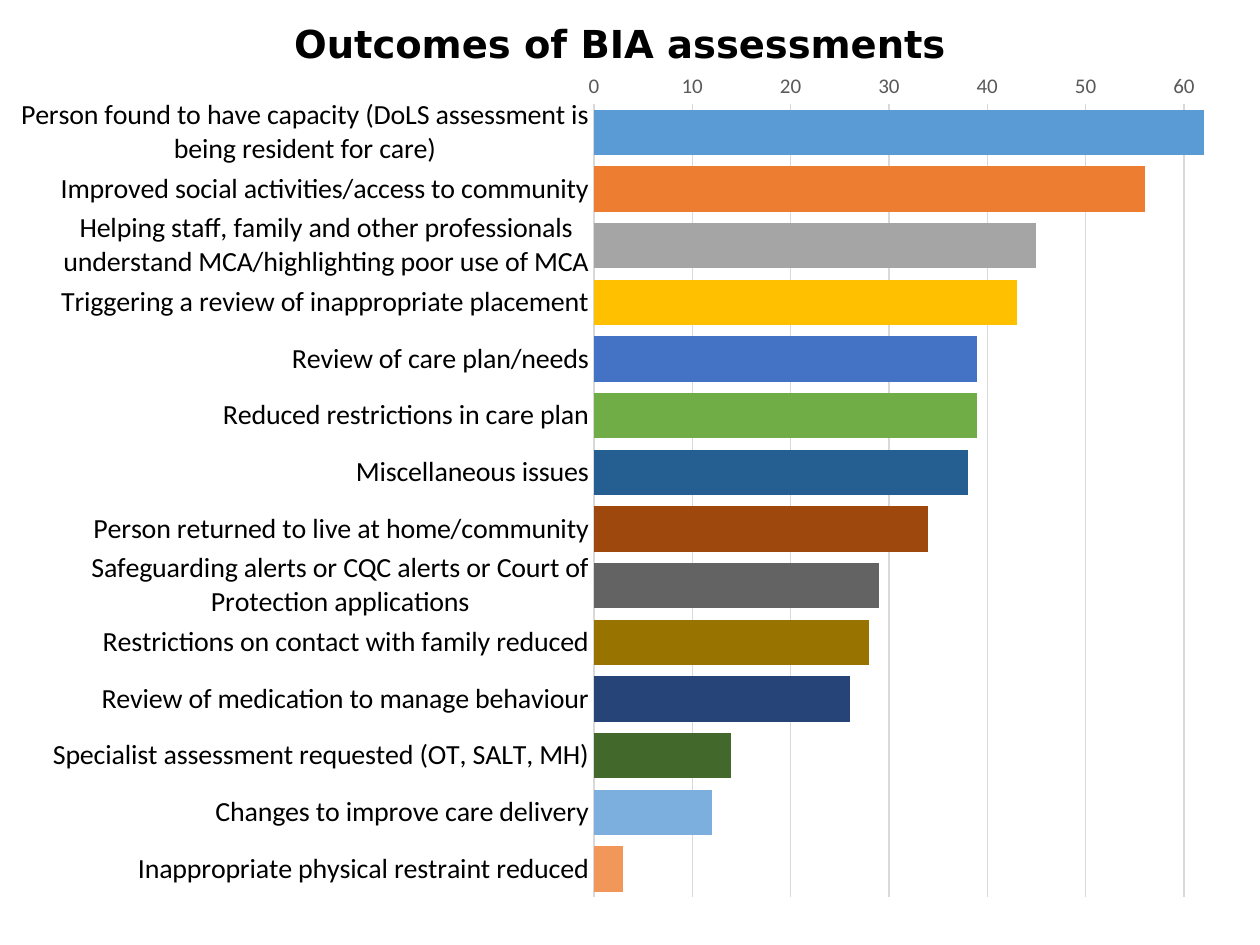
from lxml.etree import SubElement
from pptx import Presentation
from pptx.chart.data import CategoryChartData as Data
from pptx.dml.color import RGBColor as Rgb
from pptx.enum.chart import XL_CHART_TYPE as Kind, XL_TICK_MARK as Tick
from pptx.enum.text import MSO_ANCHOR as Anchor, MSO_AUTO_SIZE as Auto, PP_ALIGN as Align
from pptx.oxml.ns import qn
from pptx.util import Pt

COLORS = {"text": "000000", "muted": "595959", "grid": "D9D9D9"}

OUTCOMES = [
    ("Person found to have capacity (DoLS assessment is being resident for care)", 62, "5B9BD5"),
    ("Improved social activities/access to community", 56, "ED7D31"),
    ("Helping staff, family and other professionals understand MCA/highlighting poor use of MCA",
     45, "A5A5A5"),
    ("Triggering a review of inappropriate placement", 43, "FFC000"),
    ("Review of care plan/needs", 39, "4472C4"),
    ("Reduced restrictions in care plan", 39, "70AD47"),
    ("Miscellaneous issues", 38, "255E91"),
    ("Person returned to live at home/community", 34, "9E480E"),
    ("Safeguarding alerts or CQC alerts or Court of Protection applications", 29, "636363"),
    ("Restrictions on contact with family reduced", 28, "997300"),
    ("Review of medication to manage behaviour", 26, "264478"),
    ("Specialist assessment requested (OT, SALT, MH)", 14, "43682B"),
    ("Changes to improve care delivery", 12, "7CAFDD"),
    ("Inappropriate physical restraint reduced", 3, "F1975A"),
]


class Deck:
    def __init__(self, width, height):
        self.prs = Presentation()
        self.prs.slide_width, self.prs.slide_height = Pt(width), Pt(height)
        self.slide = self.prs.slides.add_slide(self.prs.slide_layouts[5])
        self.face, self.head = "Calibri", "DejaVu Sans"

    def style(self, font, size, color, face=None, bold=False):
        font.name, font.size, font.bold = face or self.face, Pt(size), bold
        font.color.rgb = Rgb.from_string(COLORS[color])

    def rule(self, line):
        line.width = Pt(0.75)
        line.color.rgb = Rgb.from_string(COLORS["grid"])

    def title(self, text, left, top, width, height):
        box = self.slide.shapes.title
        box.left, box.top, box.width, box.height = map(Pt, (left, top, width, height))
        frame = box.text_frame
        frame.word_wrap, frame.auto_size = True, Auto.SHAPE_TO_FIT_TEXT
        frame.vertical_anchor = Anchor.TOP
        para = frame.paragraphs[0]
        para.alignment = Align.CENTER
        run = para.add_run()
        run.text = text
        self.style(run.font, 22, "text", self.head, True)

    def bars(self, rows, left, top, width, height, area):
        names, values, fills = zip(*rows)
        data = Data()
        data.categories = names
        data.add_series("Series 1", values)
        chart = self.slide.shapes.add_chart(
            Kind.BAR_CLUSTERED, *map(Pt, (left, top, width, height)), data).chart
        chart.has_title = chart.has_legend = False
        self.style(chart.font, 10, "text")

        plot = chart.plots[0]
        plot.gap_width, plot.overlap, plot.vary_by_categories = 25, -87, False
        for i, fill in enumerate(fills):
            paint = plot.series[0].points[i].format.fill
            paint.solid()
            paint.fore_color.rgb = Rgb.from_string(fill)

        cat, val = chart.category_axis, chart.value_axis
        for axis, size, color in ((cat, 16, "text"), (val, 12, "muted")):
            axis.major_tick_mark = axis.minor_tick_mark = Tick.NONE
            self.style(axis.tick_labels.font, size, color)
        cat.reverse_order = True
        cat.has_major_gridlines = False
        self.rule(cat.format.line)
        val.minimum_scale, val.maximum_scale, val.major_unit = 0, 70, 10
        val.tick_labels.number_format = "General"
        val.tick_labels.number_format_is_linked = False
        val.has_major_gridlines = True
        self.rule(val.major_gridlines.format.line)
        val.format.line.fill.background()
        self.place(chart, area)

    def place(self, chart, area):
        """Fix the inner plot area as fractions of the chart: x, y, w, h."""
        zone = chart._chartSpace.find(".//" + qn("c:plotArea"))
        for old in zone.findall(qn("c:layout")):
            zone.remove(old)
        layout = SubElement(zone, qn("c:layout"))
        zone.insert(0, layout)
        manual = SubElement(layout, qn("c:manualLayout"))
        parts = [("layoutTarget", "inner"), ("xMode", "edge"), ("yMode", "edge")]
        for tag, value in parts + list(zip("xywh", area)):
            SubElement(manual, qn("c:" + tag)).set("val", str(value))


def main():
    deck = Deck(720, 540)
    deck.bars(OUTCOMES, 11.5, 42.5, 762.5, 499, (0.43, 0.026, 0.516, 0.916))
    deck.title("Outcomes of BIA assessments", 0, 8, 708.5, 34)
    deck.prs.save("out.pptx")


if __name__ == "__main__":
    main()
